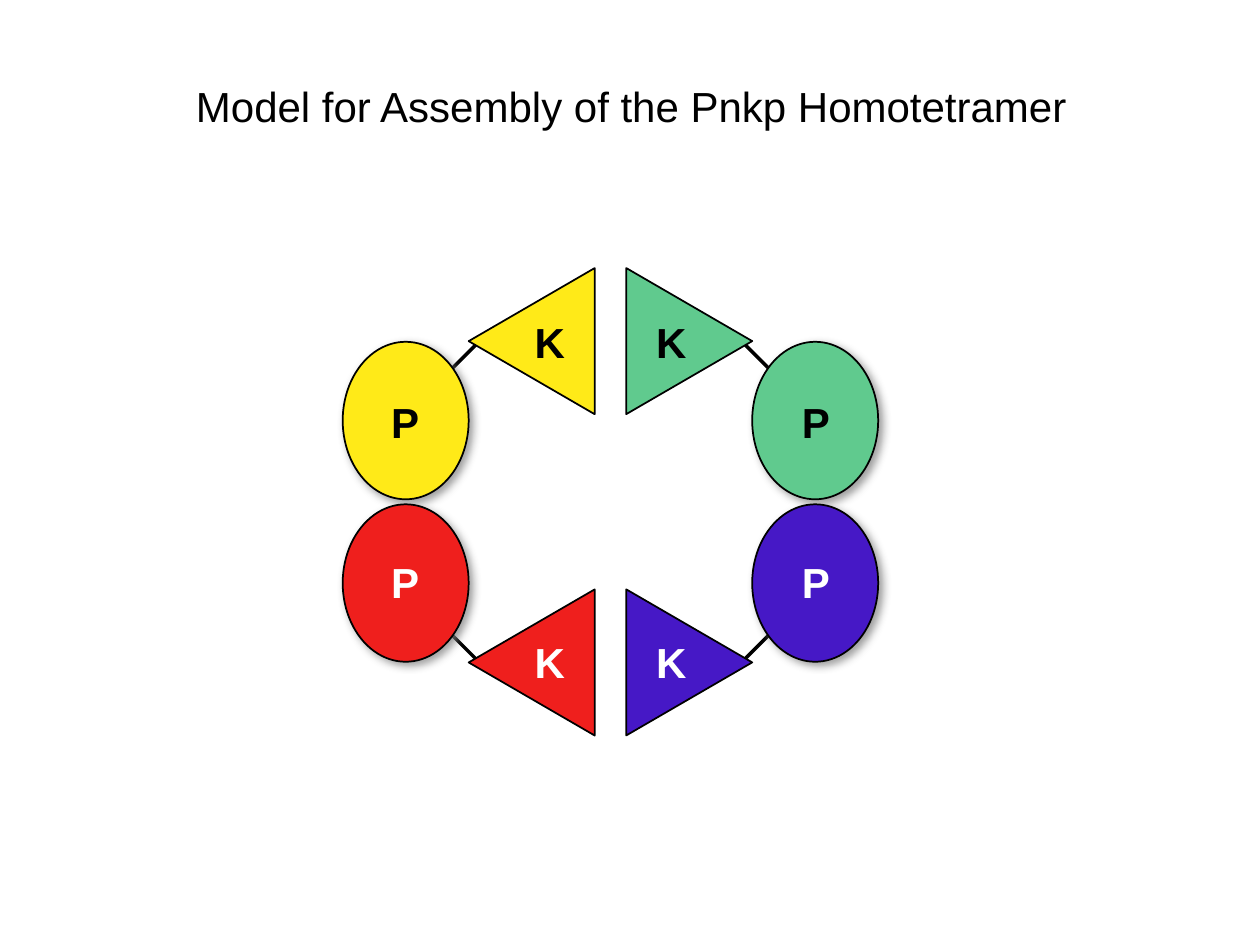
from dataclasses import dataclass

from lxml import etree
from pptx import Presentation
from pptx import util as u
from pptx.dml.color import RGBColor
from pptx.enum import shapes, text
from pptx.oxml.ns import qn


@dataclass(frozen=True)
class Theme:
    font: str = "Arial"
    size: int = 24
    black: str = "000000"
    white: str = "FFFFFF"
    yellow: str = "FFEA18"
    green: str = "60CA8E"
    red: str = "EF1F1D"
    violet: str = "4618C6"
    shadow: str = "808080"
    outline: float = 1
    link: float = 2


class Canvas:
    """Draws on one slide, with lengths in cells of a 40 by 30 grid."""
    columns, rows = 40, 30

    def __init__(self, presentation, theme):
        self.theme = theme
        self.cell_width = presentation.slide_width / self.columns
        self.cell_height = presentation.slide_height / self.rows
        self.slide = presentation.slides.add_slide(presentation.slide_layouts[6])

    def point(self, column, row):
        return u.Emu(round(column * self.cell_width)), u.Emu(round(row * self.cell_height))

    def box(self, center, size):
        (x, y), (width, height) = center, size
        return *self.point(x - width / 2, y - height / 2), *self.point(width, height)

    def link(self, start, end):
        line = self.slide.shapes.add_connector(
            shapes.MSO_CONNECTOR.STRAIGHT, *self.point(*start), *self.point(*end))
        line.line.color.rgb = RGBColor.from_string(self.theme.black)
        line.line.width = u.Pt(self.theme.link)
        etree.SubElement(line._element.spPr, qn("a:effectLst"))

    def domain(self, kind, center, size, fill, rotation=0):
        shape = self.slide.shapes.add_shape(kind, *self.box(center, size))
        shape.rotation = rotation
        shape.shadow.inherit = False
        shape.fill.solid()
        shape.fill.fore_color.rgb = RGBColor.from_string(fill)
        shape.line.color.rgb = RGBColor.from_string(self.theme.black)
        shape.line.width = u.Pt(self.theme.outline)
        return shape

    def cast_shadow(self, shape):
        effects = shape._element.spPr.find(qn("a:effectLst"))
        shadow = etree.SubElement(
            effects, qn("a:outerShdw"), blurRad=str(u.Pt(5)), dist=str(u.Pt(3)),
            dir=str(45 * 60000), algn="ctr", rotWithShape="0")
        color = etree.SubElement(shadow, qn("a:srgbClr"), val=self.theme.shadow)
        etree.SubElement(color, qn("a:alpha"), val="75000")

    def text_box(self, words, center, size, color, bold=False):
        shape = self.slide.shapes.add_textbox(*self.box(center, size))
        frame = shape.text_frame
        frame.vertical_anchor = text.MSO_ANCHOR.MIDDLE
        paragraph = frame.paragraphs[0]
        paragraph.alignment = text.PP_ALIGN.CENTER
        run = paragraph.add_run()
        run.text = words
        run.font.name = self.theme.font
        run.font.size = u.Pt(self.theme.size)
        run.font.bold = bold
        run.font.color.rgb = RGBColor.from_string(color)
        return frame

    def label(self, letter, center, color):
        frame = self.text_box(letter, center, (1.76, 2), color, bold=True)
        frame.word_wrap = False
        frame.auto_size = text.MSO_AUTO_SIZE.SHAPE_TO_FIT_TEXT

    def title(self, words, center, size):
        self.text_box(words, center, size, self.theme.black).word_wrap = True


def main():
    presentation = Presentation()
    presentation.slide_width, presentation.slide_height = u.Inches(10), u.Inches(7.5)
    theme = Theme()
    canvas = Canvas(presentation, theme)

    # Side (-1 left, 1 right), level (-1 top, 1 bottom), fill, letter colour
    subunits = [
        (-1, -1, theme.yellow, theme.black),
        (-1, 1, theme.red, theme.white),
        (1, -1, theme.green, theme.black),
        (1, 1, theme.violet, theme.white),
    ]

    def mirrored(side, level, column, row):
        """Place an offset from the ring's centre in one quadrant."""
        return 19.38 + side * column, 15.93 + level * row

    for side, level, _, _ in subunits:
        canvas.link(mirrored(side, level, 4.18, 5.08), mirrored(side, level, 5.18, 4.08))
    for side, level, fill, _ in subunits:
        ellipse = canvas.domain(shapes.MSO_SHAPE.OVAL,
                                mirrored(side, level, 6.5, 2.58), (4, 5), fill)
        canvas.cast_shadow(ellipse)
        canvas.domain(shapes.MSO_SHAPE.ISOSCELES_TRIANGLE,
                      mirrored(side, level, 2.5, 5.1), (4.64, 4), fill, side * 90 % 360)
    for side, level, _, color in subunits:
        canvas.label("K", mirrored(side, level, 1.93, 5.08), color)
        canvas.label("P", mirrored(side, level, 6.52, 2.54), color)

    canvas.title("Model for Assembly of the Pnkp Homotetramer", (20.04, 3.34), (32.96, 3))
    presentation.save("out.pptx")


if __name__ == "__main__":
    main()
